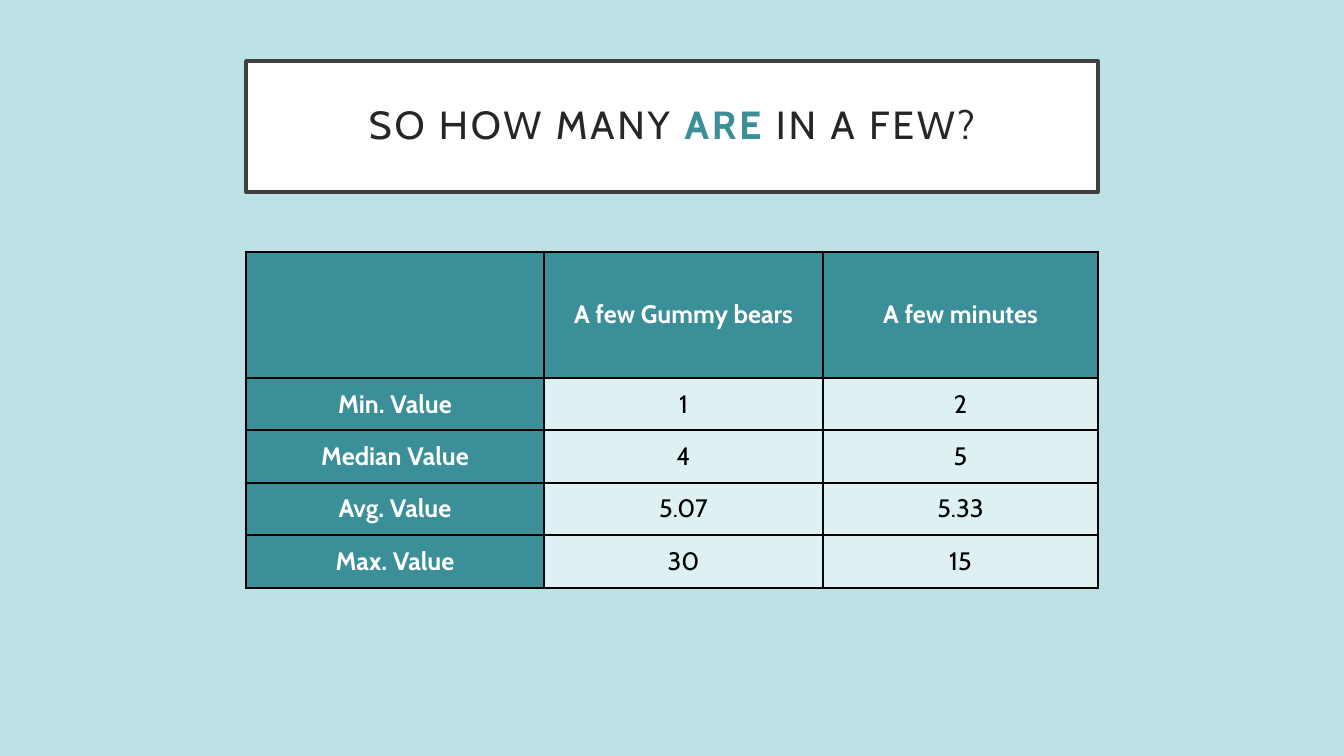
from dataclasses import dataclass

import lxml.etree
import pptx
import pptx.dml.color
import pptx.enum.shapes
import pptx.enum.text
import pptx.oxml
import pptx.oxml.ns
import pptx.util

EMU_PER_PX = 914400 / 100.8
FONT = "Cabin"
TEAL, PALE, WHITE, BLACK, INK = "3A8F98", "DEF0F2", "FFFFFF", "000000", "262626"
BACKGROUND, FRAME = "BCE2E6", "404040"
LEFT, WIDTH = 246, 852
COLUMN_WIDTHS = (298, 279, 275)
ROW_HEIGHTS = (126, 52, 53, 52, 53)
VALUES = (
    ("", "A few Gummy bears", "A few minutes"),
    ("Min. Value", "1", "2"),
    ("Median Value", "4", "5"),
    ("Avg. Value", "5.07", "5.33"),
    ("Max. Value", "30", "15"),
)


@dataclass(frozen=True)
class Piece:
    text: str
    color: str
    size: int
    bold: bool = False
    spacing: int = 0


TITLE = (
    Piece("SO HOW MANY ", INK, 28, spacing=2),
    Piece("ARE", TEAL, 28, bold=True, spacing=2),
    Piece(" IN A FEW?", INK, 28, spacing=2),
)


def px(length: int) -> pptx.util.Emu:
    return pptx.util.Emu(round(length * EMU_PER_PX))


def rgb(color: str) -> pptx.dml.color.RGBColor:
    return pptx.dml.color.RGBColor.from_string(color)


def paint(fill, color: str) -> None:
    fill.solid()
    fill.fore_color.rgb = rgb(color)


def write(para, pieces: tuple[Piece, ...]) -> None:
    para.alignment = pptx.enum.text.PP_ALIGN.CENTER
    for piece in pieces:
        span = para.add_run()
        span.text = piece.text
        style = {"name": FONT, "size": pptx.util.Pt(piece.size), "bold": piece.bold}
        for name, value in style.items():
            setattr(span.font, name, value)
        span.font.color.rgb = rgb(piece.color)
        if piece.spacing:
            span._r.get_or_add_rPr().set("spc", str(piece.spacing * 100))


def add_title(page) -> None:
    box = page.shapes.add_shape(
        pptx.enum.shapes.MSO_SHAPE.RECTANGLE, px(LEFT), px(61), px(WIDTH), px(131)
    )
    box.shadow.inherit = False
    paint(box.fill, WHITE)
    paint(box.line.fill, FRAME)
    box.line.width = pptx.util.Pt(2.5)
    frame = box.text_frame
    layout = {
        "word_wrap": True,
        "vertical_anchor": pptx.enum.text.MSO_ANCHOR.MIDDLE,
        **{f"margin_{side}": px(20) for side in ("left", "top", "right", "bottom")},
    }
    for name, value in layout.items():
        setattr(frame, name, value)
    para = frame.paragraphs[0]
    para.line_spacing = 0.9
    write(para, TITLE)


def add_borders(cell) -> None:
    """Draw a 1 pt line on each side; call before filling, as the schema puts lines first."""
    properties = cell._tc.get_or_add_tcPr()
    for side in ("a:lnL", "a:lnR", "a:lnT", "a:lnB"):
        line = lxml.etree.SubElement(
            properties, pptx.oxml.ns.qn(side), w=str(pptx.util.Pt(1))
        )
        solid = lxml.etree.SubElement(line, pptx.oxml.ns.qn("a:solidFill"))
        lxml.etree.SubElement(solid, pptx.oxml.ns.qn("a:srgbClr"), val=BLACK)


def add_values_table(page) -> None:
    table = page.shapes.add_table(
        len(ROW_HEIGHTS), len(COLUMN_WIDTHS),
        px(LEFT), px(252), px(WIDTH), px(sum(ROW_HEIGHTS)),
    ).table
    table.horz_banding = False
    table.first_col = True
    for column, width in zip(table.columns, COLUMN_WIDTHS):
        column.width = px(width)
    for row, height in zip(table.rows, ROW_HEIGHTS):
        row.height = px(height)
    for row_index, texts in enumerate(VALUES):
        for column_index, text in enumerate(texts):
            heading = row_index == 0 or column_index == 0
            cell = table.cell(row_index, column_index)
            add_borders(cell)
            paint(cell.fill, TEAL if heading else PALE)
            cell.vertical_anchor = pptx.enum.text.MSO_ANCHOR.MIDDLE
            if text:
                piece = Piece(text, WHITE if heading else BLACK, 18, bold=heading)
                write(cell.text_frame.paragraphs[0], (piece,))


def main() -> None:
    deck = pptx.Presentation()
    deck.slide_width, deck.slide_height = px(1344), px(756)
    page = deck.slides.add_slide(deck.slide_layouts[6])
    paint(page.background.fill, BACKGROUND)
    add_title(page)
    add_values_table(page)
    deck.save("out.pptx")


if __name__ == "__main__":
    main()
